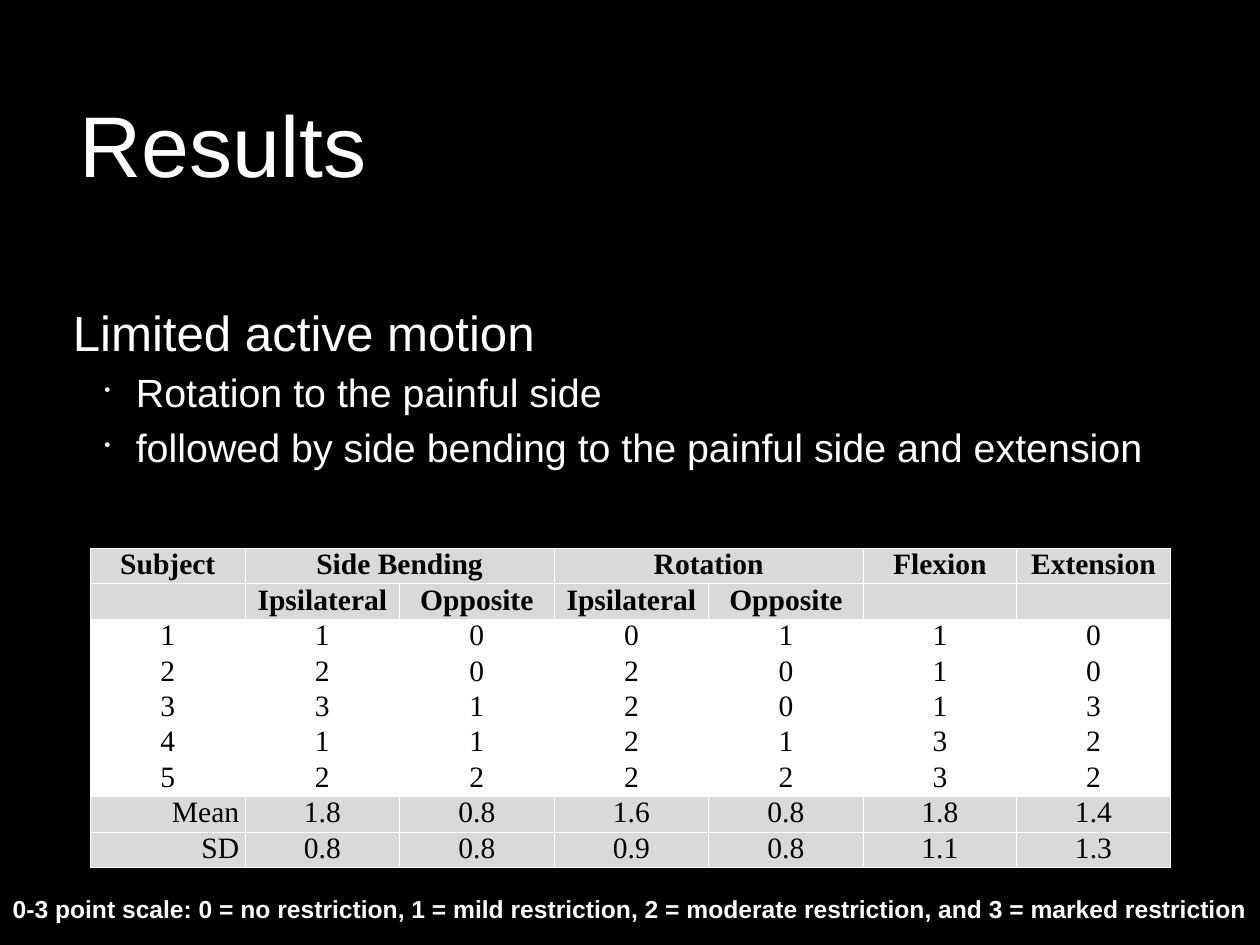
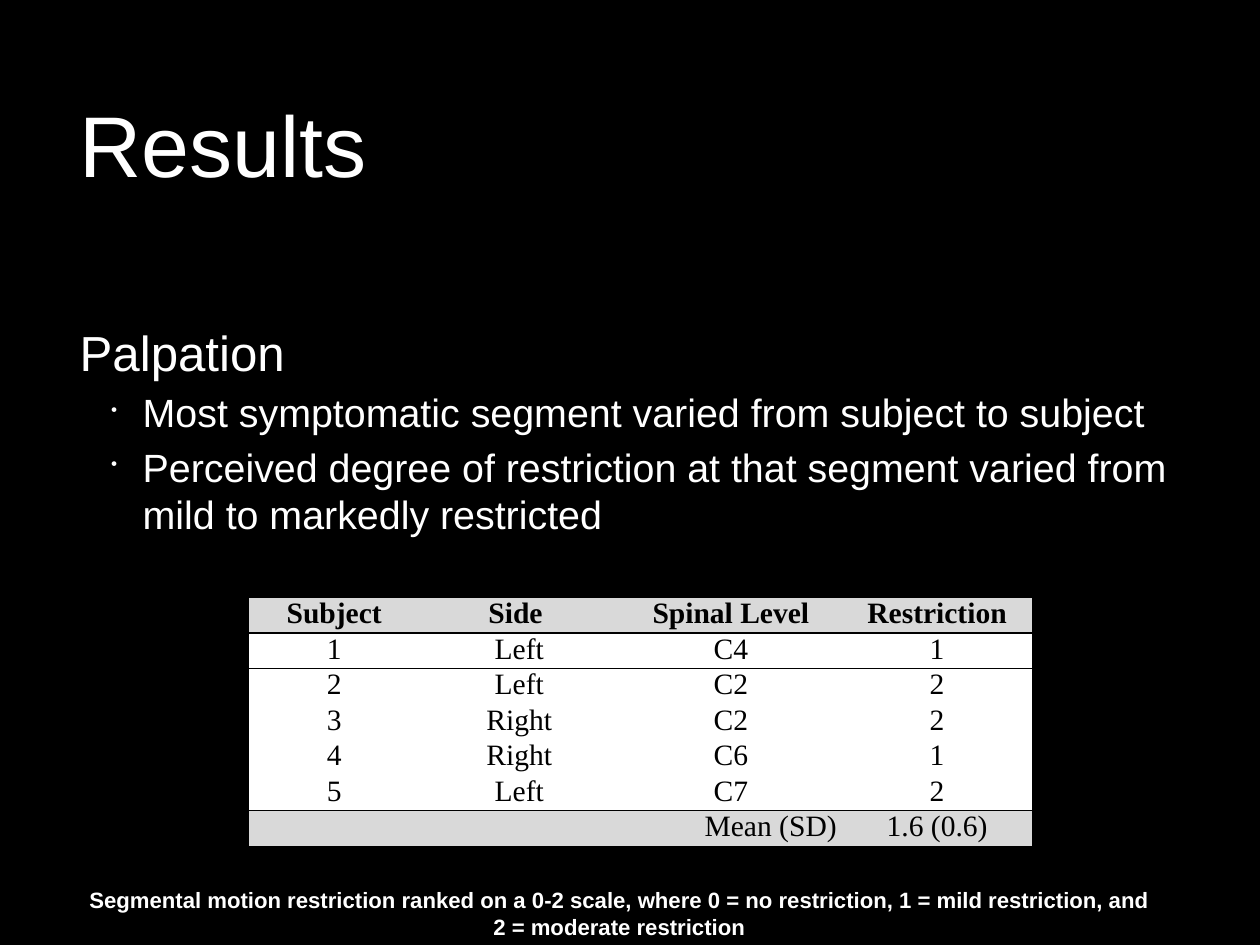
import dataclasses

import lxml.etree
import pptx
import pptx.dml.color
import pptx.enum.text
import pptx.oxml.ns
import pptx.util

ALIGN = pptx.enum.text.PP_ALIGN
ANCHOR = pptx.enum.text.MSO_ANCHOR
NO_STYLE = "{2D5ABB26-0587-4C30-8999-92F81FD0307C}"


@dataclasses.dataclass(frozen=True)
class Theme:
    black: str = "000000"
    white: str = "FFFFFF"
    gray: str = "D9D9D9"
    sans: str = "Arial"
    serif: str = "Times New Roman"
    title: int = 70
    head: int = 40
    item: int = 32
    cell: int = 24


def px(size):
    return pptx.util.Emu(size * 10160)


def rgb(code):
    return pptx.dml.color.RGBColor.from_string(code)


def node(parent, tag, **attrs):
    return lxml.etree.SubElement(parent, pptx.oxml.ns.qn(tag), **attrs)


class Deck:
    def __init__(self, theme):
        self.theme = theme
        self.prs = pptx.Presentation()
        self.prs.slide_width, self.prs.slide_height = px(1280), px(960)
        fill = self.prs.slide_master.background.fill
        fill.solid()
        fill.fore_color.rgb = rgb(theme.black)

    def style(self, para, size, face=None, color=None, bold=False):
        for run in para.runs:
            font = run.font
            font.size = pptx.util.Pt(size)
            font.name = face or self.theme.sans
            font.color.rgb = rgb(color or self.theme.white)
            font.bold = bold

    def inset(self, frame, size):
        frame.margin_left = frame.margin_right = px(size)
        frame.margin_top = frame.margin_bottom = px(size)

    def page(self, title):
        self.slide = self.prs.slides.add_slide(self.prs.slide_layouts[5])
        shape = self.slide.shapes.title
        shape.left, shape.top = px(77), px(25)
        shape.width, shape.height = px(1125), px(240)
        frame = shape.text_frame
        frame.text = title
        frame.auto_size = pptx.enum.text.MSO_AUTO_SIZE.NONE
        frame.vertical_anchor = ANCHOR.MIDDLE
        self.inset(frame, 4)
        frame.paragraphs[0].alignment = ALIGN.LEFT
        self.style(frame.paragraphs[0], self.theme.title)

    def box(self, left, top, width, height):
        shape = self.slide.shapes.add_textbox(
            px(left), px(top), px(width), px(height))
        shape.text_frame.word_wrap = True
        return shape.text_frame

    def body(self, left, top, height, head, items):
        frame = self.box(left, top, 1125, height)
        self.inset(frame, 4)
        frame.text = "\n".join([head, *items])
        for i, para in enumerate(frame.paragraphs):
            props = para._p.get_or_add_pPr()
            props.set("marL", str(px(64 if i else 32)))
            props.set("indent", str(px(-32)))
            if i:
                para.level = 1
                para.space_before = pptx.util.Pt(6)
                node(props, "a:buSzPct", val="46000")
                node(props, "a:buChar", char="•")
            self.style(para, self.theme.item if i else self.theme.head)

    def note(self, left, top, width, height, text, size):
        frame = self.box(left, top, width, height)
        frame.text = text
        frame.paragraphs[0].alignment = ALIGN.CENTER
        self.style(frame.paragraphs[0], size, bold=True)

    def edge(self, cell, sides, color):
        props = cell._tc.get_or_add_tcPr()
        kept = [side for side in "LRTB" if side in sides]
        for i, side in enumerate(kept):
            line = node(props, "a:ln" + side,
                        w=str(pptx.util.Pt(sides[side])))
            node(node(line, "a:solidFill"), "a:srgbClr", val=color)
            props.insert(i, line)  # borders come before the fill

    def table(self, left, top, cols, rows, head, foot, spans, edges, ink):
        """head and foot count rows; edges maps a row to its border widths."""
        high = 33
        grid = self.slide.shapes.add_table(
            len(rows), len(cols), px(left), px(top),
            px(sum(cols)), px(high * len(rows))).table
        grid.first_row = grid.horz_banding = False
        grid._tbl.tblPr.find(pptx.oxml.ns.qn("a:tableStyleId")).text = NO_STYLE
        for col, width in zip(grid.columns, cols):
            col.width = px(width)
        for r, row in enumerate(rows):
            grid.rows[r].height = px(high)
            last = r >= len(rows) - foot
            for c, text in enumerate(row):
                cell = grid.cell(r, c)
                cell.text = text
                cell.margin_left = cell.margin_right = px(6)
                cell.margin_top = cell.margin_bottom = 0
                cell.fill.solid()
                cell.fill.fore_color.rgb = rgb(
                    self.theme.gray if r < head or last else self.theme.white)
                para = cell.text_frame.paragraphs[0]
                para.alignment = ALIGN.RIGHT if last and c == 0 else ALIGN.CENTER
                self.style(para, self.theme.cell, self.theme.serif,
                           self.theme.black, r < head)
                self.edge(cell, edges.get(r, {}), ink)
        for r, start, end in spans:
            grid.cell(r, start).merge(grid.cell(r, end))


def main():
    theme = Theme()
    deck = Deck(theme)

    # Active motion
    deck.page("Results")
    deck.body(70, 303, 180, "Limited active motion", [
        "Rotation to the painful side",
        "followed by side bending to the painful side and extension"])
    rows = [
        ["Subject", "Side Bending", "", "Rotation", "", "Flexion", "Extension"],
        ["", "Ipsilateral", "Opposite", "Ipsilateral", "Opposite", "", ""],
        *map(list, ("1100110", "2202010", "3312013", "4112132", "5222232")),
        ["Mean", "1.8", "0.8", "1.6", "0.8", "1.8", "1.4"],
        ["SD", "0.8", "0.8", "0.9", "0.8", "1.1", "1.3"]]
    full = {r: dict.fromkeys("LRTB", 1) for r in range(len(rows))}
    deck.table(92, 557, [157] * 5 + [156] * 2, rows, 2, 2,
               [(0, 1, 2), (0, 3, 4)], full, theme.white)
    deck.note(0, 904, 1280, 40,
              "0-3 point scale: 0 = no restriction, 1 = mild restriction, "
              "2 = moderate restriction, and 3 = marked restriction", 20)

    # Palpation
    deck.page("Results")
    deck.body(77, 323, 220, "Palpation", [
        "Most symptomatic segment varied from subject to subject",
        "Perceived degree of restriction at that segment varied from "
        "mild to markedly restricted"])
    rows = [
        ["Subject", "Side ", "Spinal Level", "Restriction"],
        ["1", "Left", "C4", "1"],
        ["2", "Left", "C2", "2"],
        ["3", "Right", "C2", "2"],
        ["4", "Right", "C6", "1"],
        ["5", "Left", "C7", "2"],
        ["Mean (SD)", "", "", "1.6 (0.6)"]]
    rules = {0: {"T": 1.5, "B": 1}, 1: {"T": 1}, 5: {"B": 1}, 6: {"T": 1}}
    deck.table(253, 607, [173, 203, 227, 192], rows, 1, 1,
               [(6, 0, 2)], rules, theme.black)
    deck.note(77, 896, 1104, 64,
              "Segmental motion restriction ranked on a 0-2 scale, where "
              "0 = no restriction, 1 = mild restriction, and "
              "2 = moderate restriction", 18)

    deck.prs.save("out.pptx")


if __name__ == "__main__":
    main()
